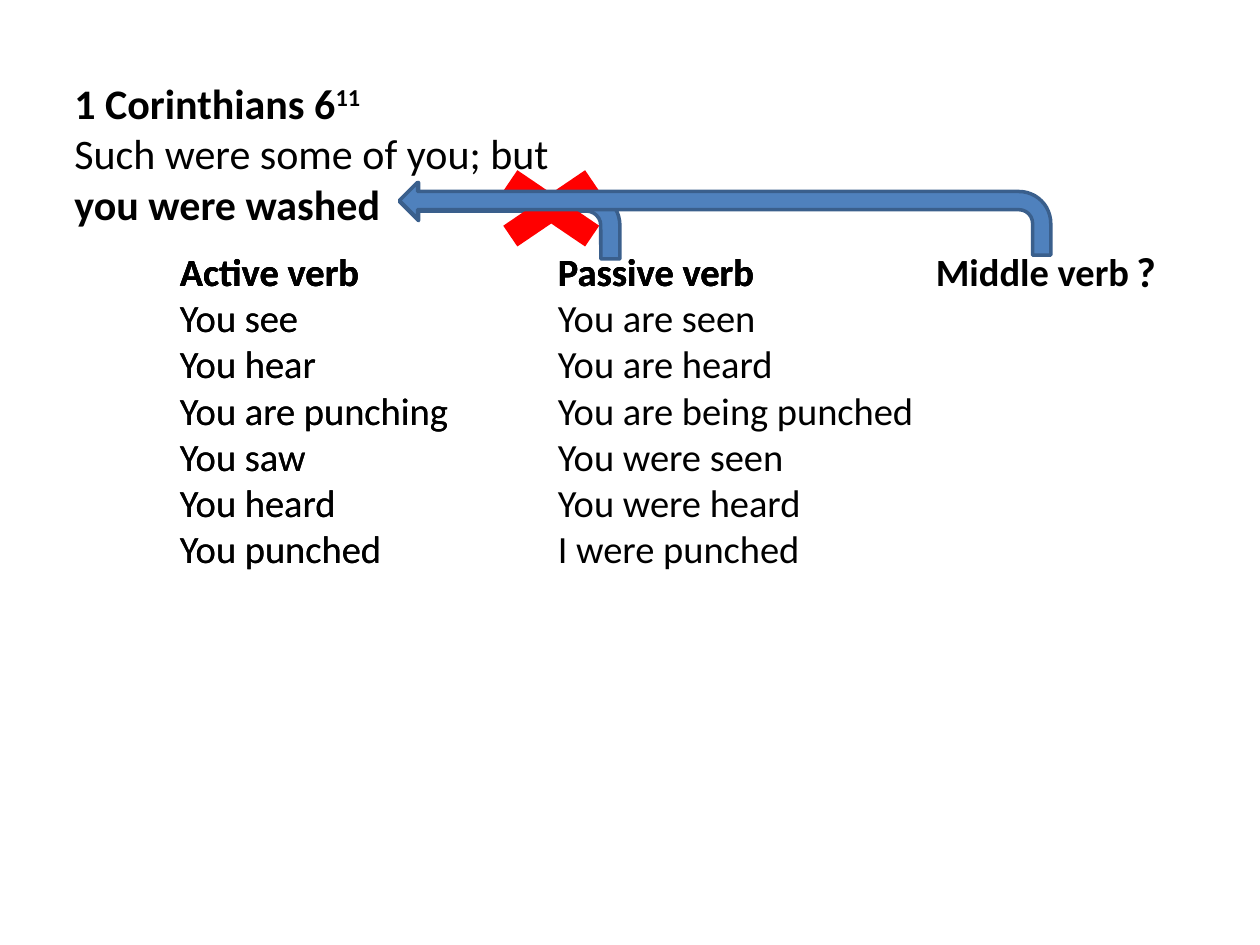
from lxml import etree
from pptx import Presentation
from pptx.dml.color import RGBColor
from pptx.enum.shapes import MSO_SHAPE
from pptx.enum.text import MSO_ANCHOR, MSO_AUTO_SIZE, PP_ALIGN
from pptx.oxml.ns import qn
from pptx.util import Inches, Pt

ARROW, CROSS = MSO_SHAPE.BENT_ARROW, MSO_SHAPE.MATH_MULTIPLY
TOP, LEFT, NO_FIT = MSO_ANCHOR.TOP, PP_ALIGN.LEFT, MSO_AUTO_SIZE.NONE

prs = Presentation()
prs.slide_width, prs.slide_height = Inches(10), Inches(7.5)
COL, ROW = prs.slide_width / 100, prs.slide_height / 100
TAB = 30 * COL
s = prs.slides.add_slide(prs.slide_layouts[5])


def grid(c, r, w, h):
    return [round(v) for v in (c * COL, r * ROW, w * COL, h * ROW)]


def write(sp, lines, size, bold_lines):
    tf = sp.text_frame
    tf.word_wrap, tf.auto_size, tf.vertical_anchor = True, NO_FIT, TOP
    tf.text = "\n".join(lines)
    for i, p in enumerate(tf.paragraphs):
        p.alignment = LEFT
        for r in p.runs:
            r.font.name, r.font.size, r.font.bold = "Calibri", Pt(size), i in bold_lines
            r.font.color.rgb = RGBColor.from_string("000000")


verse = s.shapes.title
verse.left, verse.top, verse.width, verse.height = grid(4.9, 7.5, 91.8, 17.5)
lines = ["1 Corinthians 6", "Such were some of you; but", "you were\u00a0washed"]
write(verse, lines, 24, (0, 2))
p = verse.text_frame.paragraphs[0]
r = p.add_run()
r.text = "11"
r.font.name, r.font.size, r.font.bold = "Calibri", Pt(24), True
r.font.color.rgb = RGBColor.from_string("000000")
r.font._element.set("baseline", "30000")

active = ["Active verb", "You see", "You hear", "You are punching", "You saw", "You heard", "You punched"]
passive = ["Passive verb", "You are seen", "You are heard", "You are being punched",
           "You were seen", "You were heard", "I were punched"]
pairs = ["\t".join(pair) for pair in zip(active, passive)]
layers = [pairs[:1] + active[1:], pairs, [pairs[0] + "\tMiddle verb"]]
for lines in layers:
    sp = s.shapes.add_textbox(*grid(13.3, 25.6, 80, 1.2 + 4.95 * len(lines)))
    write(sp, lines, 22, (0,))
    for p in sp.text_frame.paragraphs:
        tabs = etree.SubElement(p._p.get_or_add_pPr(), qn("a:tabLst"))
        for n in (1, 2):
            etree.SubElement(tabs, qn("a:tab"), pos=str(round(n * TAB)), algn="l")

shapes = [
    (ARROW, (31.7, 19.3, 17.5, 8.1), "4F81BD"),
    (CROSS, (37.5, 16.4, 12.5, 11.3), "FF0000"),
    (ARROW, (31.7, 19.3, 51.7, 7.7), "4F81BD"),
]
for kind, box, color in shapes:
    sp = s.shapes.add_shape(kind, *grid(*box))
    sp.shadow.inherit = False
    sp.fill.solid()
    sp.fill.fore_color.rgb = RGBColor.from_string(color)
    if kind == ARROW:
        sp.line.color.rgb = RGBColor.from_string("3A5F8C")
        sp.line.width = Pt(2)
        sp._element.spPr.xfrm.set("flipH", "1")
    else:
        sp.line.fill.background()

question = s.shapes.add_textbox(*grid(89.2, 25.3, 4.4, 6.7))
write(question, ["?"], 24, (0,))

prs.save("out.pptx")
